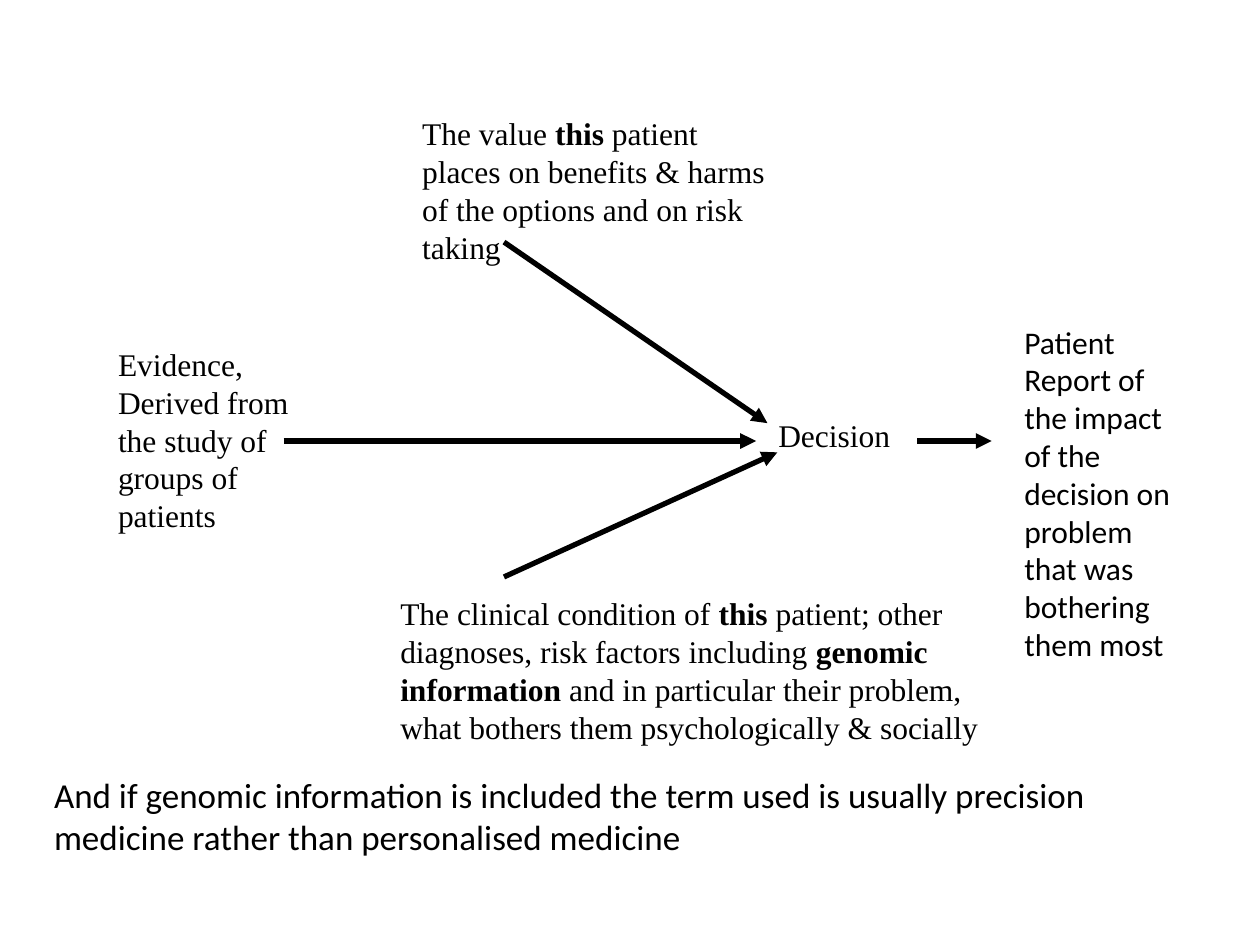
from dataclasses import dataclass

from lxml.etree import SubElement
from pptx import Presentation
from pptx.dml.color import RGBColor
from pptx.enum.shapes import MSO_CONNECTOR
from pptx.oxml.ns import qn
from pptx.slide import Slide
from pptx.util import Cm, Pt

BLACK = RGBColor(0, 0, 0)
SERIF = "Times New Roman"
SANS = "Calibri"


@dataclass(frozen=True)
class Label:
    """Text placed in centimetres; asterisks enclose bold words."""
    left: float
    top: float
    width: float
    height: float
    paragraphs: tuple[str, ...]
    font: str = SERIF
    size: int = 18
    wrap: bool = True


@dataclass(frozen=True)
class Arrow:
    start: tuple[float, float]
    end: tuple[float, float]


LABELS = (
    Label(2.13, 6.83, 4.85, 4.11,
          ("Evidence,", "Derived from the study of groups of patients")),
    Label(8.26, 2.18, 7.42, 3.33,
          ("The value *this* patient",
           "places on benefits & harms of the options and on risk taking")),
    Label(7.82, 11.86, 12.55, 3.33,
          ("The clinical condition of *this* patient; other diagnoses, risk factors "
           "including *genomic information *and in particular their problem, "
           "what bothers them psychologically & socially",)),
    Label(15.44, 8.26, 2.79, 1.02, ("Decision",), wrap=False),
    Label(20.4, 6.38, 3.61, 7.19,
          ("Patient",
           "Report of the impact of the decision on problem that was bothering",
           "them most"), font=SANS),
    Label(0.84, 15.47, 23.55, 3.58,
          ("And if genomic information is included the term used is usually "
           "precision medicine rather than personalised medicine",),
          font=SANS, size=20),
)

AXIS = 8.89
ARROWS = (
    Arrow((5.72, AXIS), (15.24, AXIS)),
    Arrow((10.16, 11.63), (15.67, 9.12)),
    Arrow((10.16, 4.88), (15.47, 8.53)),
    Arrow((18.49, AXIS), (19.99, AXIS)),
)


def add_text(page: Slide, left: float, top: float, width: float, height: float,
             paragraphs: tuple[str, ...], *, font: str, size: int, wrap: bool) -> None:
    box = page.shapes.add_textbox(Cm(left), Cm(top), Cm(width), Cm(height))
    frame = box.text_frame
    frame.word_wrap = wrap
    for number, text in enumerate(paragraphs):
        para = frame.add_paragraph() if number else frame.paragraphs[0]
        for position, part in enumerate(text.split("*")):
            span = para.add_run()
            span.text = part
            span.font.name = font
            span.font.size = Pt(size)
            span.font.bold = position % 2 == 1
            span.font.color.rgb = BLACK


def add_arrow(page: Slide, arrow: Arrow) -> None:
    points = (Cm(value) for value in (*arrow.start, *arrow.end))
    connector = page.shapes.add_connector(MSO_CONNECTOR.STRAIGHT, *points)
    connector.line.color.rgb = BLACK
    connector.line.width = Pt(3)
    SubElement(connector.line._get_or_add_ln(), qn("a:tailEnd"), type="triangle")
    SubElement(connector._element.spPr, qn("a:effectLst"))


def main() -> None:
    deck = Presentation()
    deck.slide_width, deck.slide_height = Cm(25.4), Cm(19.05)
    page = deck.slides.add_slide(deck.slide_layouts[6])
    for label in LABELS:
        add_text(page, label.left, label.top, label.width, label.height,
                 label.paragraphs, font=label.font, size=label.size, wrap=label.wrap)
    for arrow in ARROWS:
        add_arrow(page, arrow)
    deck.save("out.pptx")


if __name__ == "__main__":
    main()
